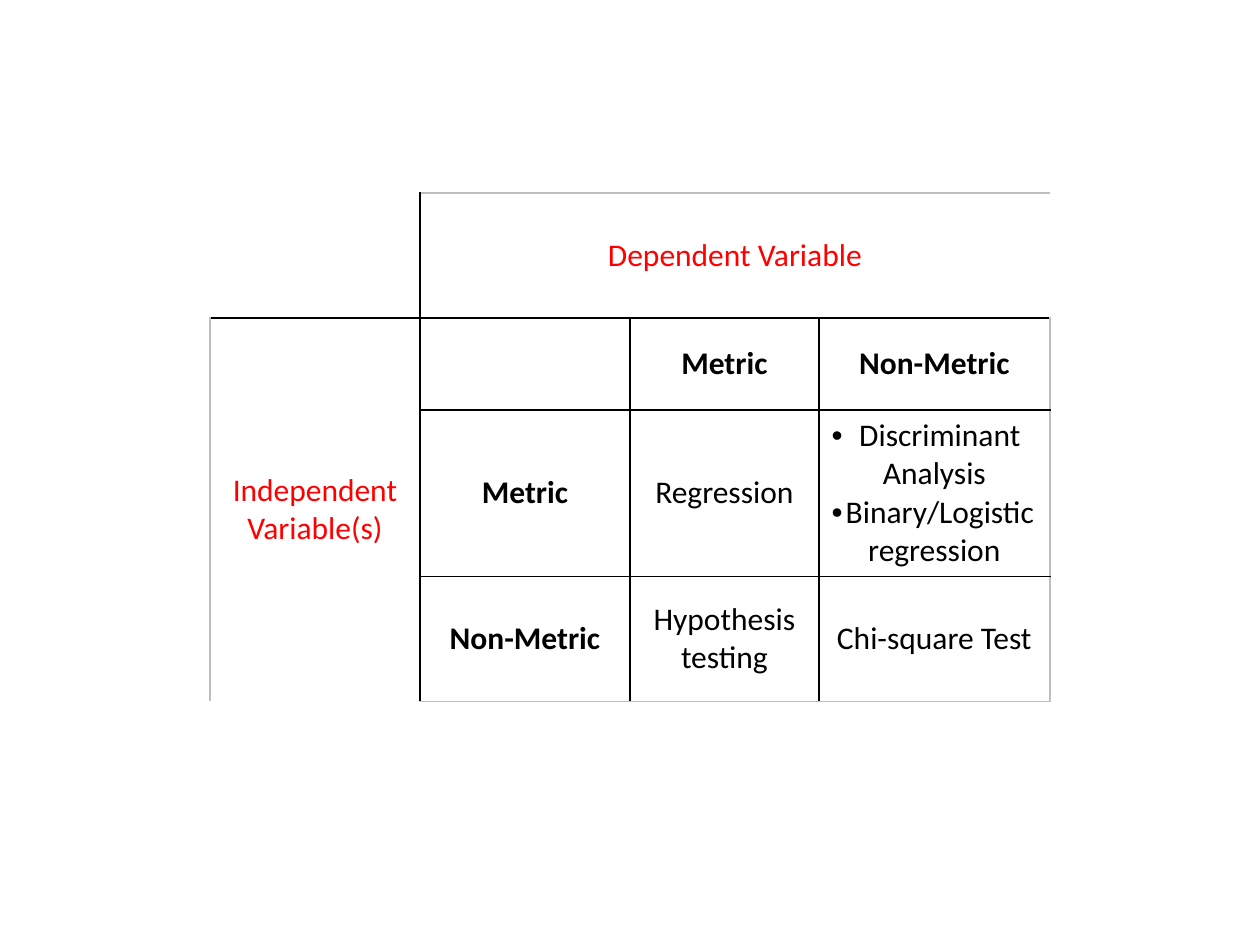
import dataclasses
import itertools
import typing

import lxml.etree
import pptx
import pptx.dml.color
import pptx.enum.text
import pptx.oxml.ns
import pptx.util

PX = 914400 // 126
BLACK = pptx.dml.color.RGBColor(0, 0, 0)
RED = pptx.dml.color.RGBColor(255, 0, 0)
GREY = pptx.dml.color.RGBColor(191, 191, 191)
FONT = "Calibri"
PLAIN = "{2D5ABB26-0587-4C30-8999-92F81FD0307C}"
COLS = [210, 210, 189, 231]
ROWS = [125, 92, 156, 125]
SIDES = {"lnL": (0, -1), "lnR": (0, 1), "lnT": (-1, 0), "lnB": (1, 0)}

Spot = tuple[int, int]


@dataclasses.dataclass
class Entry:
    row: int
    col: int
    lines: list[str]
    bold: bool = False
    color: pptx.dml.color.RGBColor = BLACK
    dots: bool = False


ENTRIES = [
    Entry(0, 1, ["Dependent Variable"], color=RED),
    Entry(1, 0, ["Independent Variable(s)"], color=RED),
    Entry(1, 2, ["Metric"], bold=True),
    Entry(1, 3, ["Non-Metric"], bold=True),
    Entry(2, 1, ["Metric"], bold=True),
    Entry(2, 2, ["Regression"]),
    Entry(2, 3, ["Discriminant Analysis", "Binary/Logistic regression"], dots=True),
    Entry(3, 1, ["Non-Metric"], bold=True),
    Entry(3, 2, ["Hypothesis testing"]),
    Entry(3, 3, ["Chi-square Test"]),
]


def add_node(base: typing.Any, tag: str, **attrs: str) -> typing.Any:
    return lxml.etree.SubElement(base, pptx.oxml.ns.qn(f"a:{tag}"), attrs)


def get_owner(row: int, col: int) -> Spot:
    return (row, min(col, 1)) if row == 0 else (min(row, 1) if col == 0 else row, col)


def get_color(row: int, col: int, step: Spot) -> pptx.dml.color.RGBColor | None:
    side = row + step[0], col + step[1]
    if not (0 <= side[0] < len(ROWS) and 0 <= side[1] < len(COLS)):
        return None if (row, col) == (0, 0) else GREY
    return None if get_owner(*side) == get_owner(row, col) else BLACK


def style_cell(grid: typing.Any, row: int, col: int) -> None:
    cell = grid.cell(row, col)
    cell.vertical_anchor = pptx.enum.text.MSO_ANCHOR.MIDDLE
    props = cell._tc.get_or_add_tcPr()
    for tag, step in SIDES.items():
        color = get_color(row, col, step)
        if color is not None:
            line = add_node(props, tag, w=str(pptx.util.Pt(1)))
            add_node(add_node(line, "solidFill"), "srgbClr", val=str(color))
    cell.fill.background()


def write_cell(grid: typing.Any, entry: Entry) -> None:
    frame = grid.cell(entry.row, entry.col).text_frame
    for index, text in enumerate(entry.lines):
        para = frame.add_paragraph() if index else frame.paragraphs[0]
        para.alignment = pptx.enum.text.PP_ALIGN.CENTER
        if entry.dots:
            props = para._p.get_or_add_pPr()
            add_node(props, "buFont", typeface="Arial")
            add_node(props, "buChar", char="•")
        run = para.add_run()
        run.text = text
        run.font.name = FONT
        run.font.size = pptx.util.Pt(18)
        run.font.bold = entry.bold
        run.font.color.rgb = entry.color


def add_grid(slide: typing.Any, left: int, top: int) -> None:
    frame = slide.shapes.add_table(
        len(ROWS), len(COLS), left * PX, top * PX, sum(COLS) * PX, sum(ROWS) * PX
    )
    grid = frame.table
    grid.first_row = grid.horz_banding = False
    grid._tbl.tblPr.find(pptx.oxml.ns.qn("a:tableStyleId")).text = PLAIN
    for col, width in zip(grid.columns, COLS):
        col.width = width * PX
    for row, height in zip(grid.rows, ROWS):
        row.height = height * PX
    grid.cell(0, 1).merge(grid.cell(0, 3))
    grid.cell(1, 0).merge(grid.cell(3, 0))
    for row, col in itertools.product(range(len(ROWS)), range(len(COLS))):
        style_cell(grid, row, col)
    for entry in ENTRIES:
        write_cell(grid, entry)


def main() -> None:
    deck = pptx.Presentation()
    deck.slide_width = 1260 * PX
    deck.slide_height = 945 * PX
    slide = deck.slides.add_slide(deck.slide_layouts[6])
    add_grid(slide, 210, 193)
    deck.save("out.pptx")


if __name__ == "__main__":
    main()
